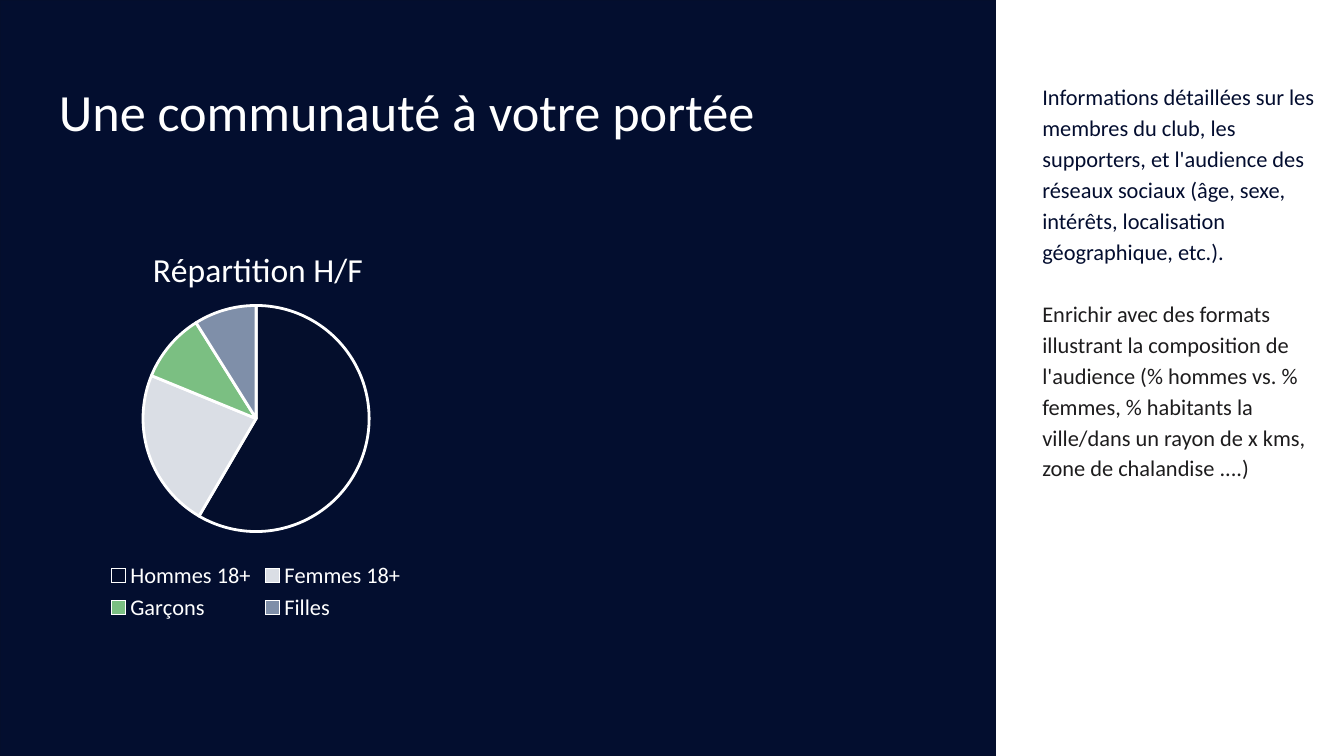
from dataclasses import dataclass

from lxml import etree
from pptx import Presentation
from pptx.chart.data import CategoryChartData
from pptx.dml.color import RGBColor
from pptx.enum.chart import XL_CHART_TYPE, XL_LEGEND_POSITION
from pptx.enum.shapes import MSO_SHAPE
from pptx.enum.text import MSO_ANCHOR, PP_ALIGN
from pptx.util import Pt

PIE = XL_CHART_TYPE.PIE
LEGEND_BOTTOM = XL_LEGEND_POSITION.BOTTOM
RECTANGLE = MSO_SHAPE.RECTANGLE
TOP = MSO_ANCHOR.TOP
LEFT = PP_ALIGN.LEFT
CHART_TAG = "{http://schemas.openxmlformats.org/drawingml/2006/chart}"


@dataclass(frozen=True)
class Theme:
    font: str = "Calibri"
    panel: str = "030E2F"
    panel_line: str = "040E2C"
    white: str = "FFFFFF"
    navy_text: str = "030D2F"
    dark_text: str = "1D1C1D"
    slices: tuple = ("040E2C", "DADEE5", "7BBF82", "7F8FA9")
    title_size: float = 28
    chart_title_size: float = 18
    body_size: float = 12


class PageBuilder:
    """Draws styled elements on the current page."""

    def __init__(self, page, theme):
        self.page = page
        self.theme = theme

    def style_font(self, font, size, color):
        font.name = self.theme.font
        font.size = Pt(size)
        font.bold = False
        font.color.rgb = RGBColor.from_string(color)

    def panel(self, left, top, width, height):
        shape = self.page.shapes.add_shape(RECTANGLE, Pt(left), Pt(top), Pt(width), Pt(height))
        shape.shadow.inherit = False
        shape.fill.solid()
        shape.fill.fore_color.rgb = RGBColor.from_string(self.theme.panel)
        shape.line.color.rgb = RGBColor.from_string(self.theme.panel_line)
        shape.line.width = Pt(0.75)

    def text(self, left, top, width, height, entries, size, indent=0, spacing=1.0, gap=0):
        box = self.page.shapes.add_textbox(Pt(left), Pt(top), Pt(width), Pt(height))
        frame = box.text_frame
        frame.word_wrap = True
        frame.vertical_anchor = TOP
        frame.margin_left = Pt(7.2 + indent)
        frame.margin_right = frame.margin_top = frame.margin_bottom = Pt(7.2)
        frame.text = "\n".join(words for words, _ in entries)
        for number, (para, (_, color)) in enumerate(zip(frame.paragraphs, entries)):
            para.alignment = LEFT
            para.line_spacing = spacing
            para.space_before = Pt(gap if number else 0)
            for span in para.runs:
                self.style_font(span.font, size, color)

    def place(self, element, index, **fractions):
        for old in element.findall(CHART_TAG + "layout"):
            element.remove(old)
        layout = etree.Element(CHART_TAG + "layout")
        manual = etree.SubElement(layout, CHART_TAG + "manualLayout")
        if "w" in fractions:
            etree.SubElement(manual, CHART_TAG + "layoutTarget", val="inner")
        for axis in "xy":
            etree.SubElement(manual, f"{CHART_TAG}{axis}Mode", val="edge")
        for name, value in fractions.items():
            etree.SubElement(manual, CHART_TAG + name, val=str(value))
        element.insert(index, layout)

    def pie(self, left, top, width, height, title, shares):
        theme = self.theme
        data = CategoryChartData()
        data.categories = list(shares)
        data.add_series("Series 1", list(shares.values()))
        frame = self.page.shapes.add_chart(PIE, Pt(left), Pt(top), Pt(width), Pt(height), data)
        chart = frame.chart
        self.style_font(chart.font, 10, theme.panel_line)

        heading = chart.chart_title
        heading.text_frame.text = title
        for span in heading.text_frame.paragraphs[0].runs:
            self.style_font(span.font, theme.chart_title_size, theme.white)
        title_element = chart.element.find(f".//{CHART_TAG}title")
        self.place(title_element, 1, x=0.24, y=0.06)
        plot_element = chart.element.find(f".//{CHART_TAG}plotArea")
        self.place(plot_element, 0, x=0.23, y=0.22, w=0.54, h=0.55)

        chart.has_legend = True
        chart.legend.position = LEGEND_BOTTOM
        chart.legend.include_in_layout = False
        self.style_font(chart.legend.font, theme.body_size, theme.white)

        plot = chart.plots[0]
        plot.vary_by_categories = True
        for number, color in enumerate(theme.slices):
            slice_format = plot.series[0].points[number].format
            slice_format.fill.solid()
            slice_format.fill.fore_color.rgb = RGBColor.from_string(color)
            slice_format.line.color.rgb = RGBColor.from_string(theme.white)
            slice_format.line.width = Pt(1.5)


def main():
    theme = Theme()
    deck = Presentation()
    deck.slide_width, deck.slide_height = Pt(720), Pt(405)
    builder = PageBuilder(deck.slides.add_slide(deck.slide_layouts[6]), theme)

    builder.panel(0, 0, 533, 405)
    builder.text(24.5, 35.3, 486.7, 45.4,
                 [("Une communauté à votre portée", theme.white)], theme.title_size)
    builder.text(
        542.2, 35.3, 170.6, 362.2,
        [
            ("Informations détaillées sur les membres du club, les supporters, et l'audience "
             "des réseaux sociaux (âge, sexe, intérêts, localisation géographique, etc.).",
             theme.navy_text),
            ("Enrichir avec des formats illustrant la composition de l'audience (% hommes vs. "
             "% femmes, % habitants la ville/dans un rayon de x kms, zone de chalandise ....)",
             theme.dark_text),
        ],
        theme.body_size, indent=9, spacing=1.15, gap=16.8,
    )
    builder.pie(24.5, 115.2, 225.4, 220.3, "Répartition H/F",
                {"Hommes 18+": 59, "Femmes 18+": 23, "Garçons": 10, "Filles": 9})
    deck.save("out.pptx")


if __name__ == "__main__":
    main()
